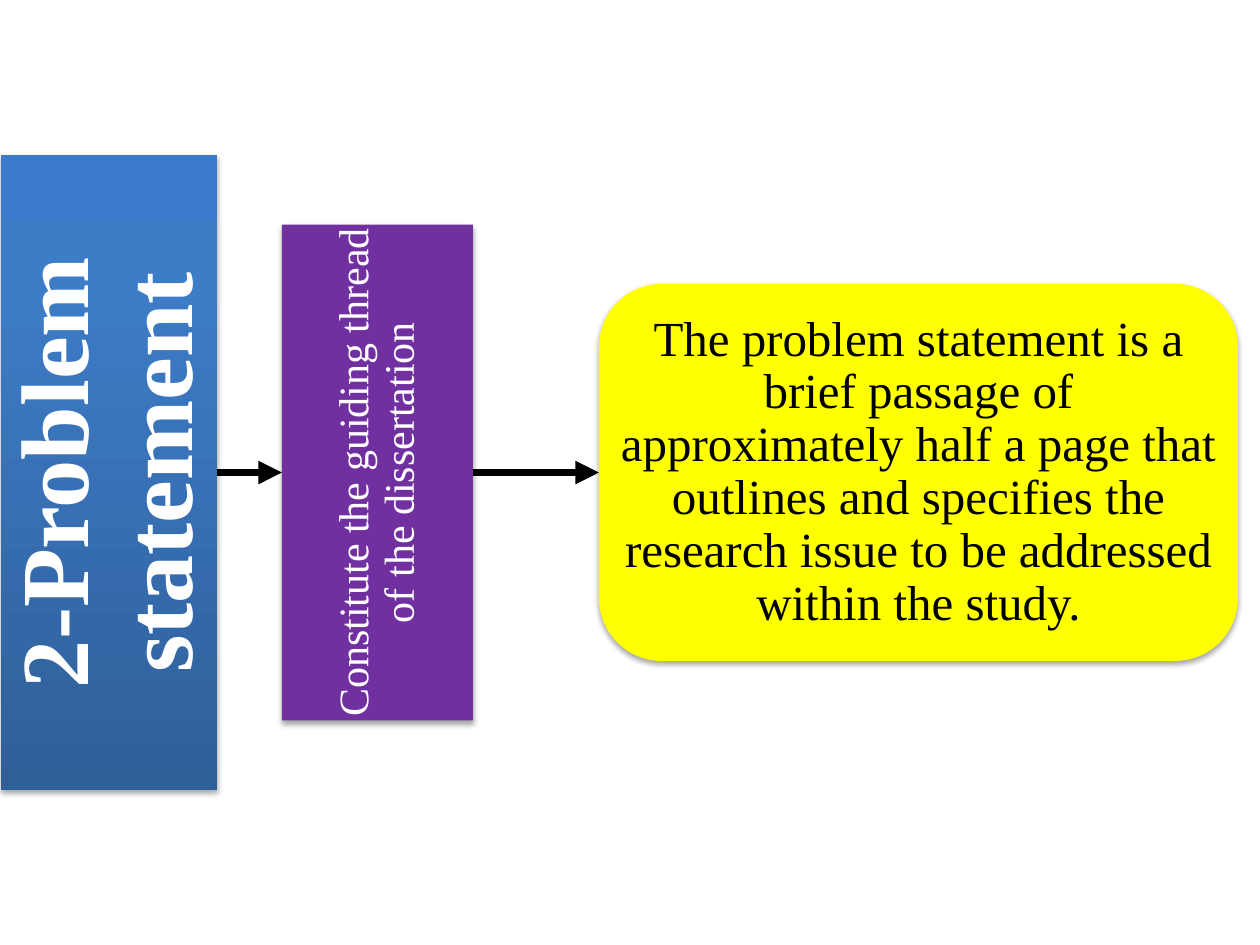
from pptx import Presentation
from pptx.dml.color import RGBColor
from pptx.enum.shapes import MSO_CONNECTOR, MSO_SHAPE
from pptx.enum.text import MSO_ANCHOR, PP_ALIGN
from pptx.oxml import parse_xml
from pptx.oxml.ns import nsdecls
from pptx.util import Pt

PX = 914400 / 126
INK = {"blue": "3A7CCB", "mid": "3D7CC7", "navy": "2F5F99", "purple": "7030A0",
       "yellow": "FFFF00", "white": "FFFFFF", "black": "000000"}
RECT, ROUND = MSO_SHAPE.RECTANGLE, MSO_SHAPE.FLOWCHART_ALTERNATE_PROCESS


def px(n):
    return round(n * PX)


def ink(name):
    return RGBColor.from_string(INK[name])


def write(shape, text, size, color="black", bold=False, inset=2, upright=False):
    frame = shape.text_frame
    frame.word_wrap = True
    frame.vertical_anchor = MSO_ANCHOR.MIDDLE
    frame.margin_left = frame.margin_right = px(inset)
    frame.margin_top = frame.margin_bottom = px(inset)
    if upright:
        frame._txBody.bodyPr.set("vert", "vert270")
    para = frame.paragraphs[0]
    para.alignment = PP_ALIGN.CENTER
    para.line_spacing = 0.9
    run = para.add_run()
    run.text = text
    font = run.font
    font.name, font.size, font.bold = "Times New Roman", Pt(size), bold
    font.color.rgb = ink(color)


def shade(shape):
    """Soft shadow straight below the shape."""
    shape._element.spPr.append(parse_xml(
        f'<a:effectLst {nsdecls("a")}><a:outerShdw blurRad="{Pt(3.1)}" dist="{Pt(1.8)}" '
        'dir="5400000" rotWithShape="0"><a:srgbClr val="000000"><a:alpha val="35000"/>'
        '</a:srgbClr></a:outerShdw></a:effectLst>'))


def fade(shape, stops):
    """Gradient that runs from the bottom to the top."""
    fill = shape.fill
    fill.gradient()
    fill.gradient_angle = 90
    marks = shape._element.spPr.find(".//{*}gsLst")
    for mark in list(marks):
        marks.remove(mark)
    for pos, name in stops:
        marks.append(parse_xml(f'<a:gs {nsdecls("a")} pos="{pos * 1000}">'
                               f'<a:srgbClr val="{INK[name]}"/></a:gs>'))


def block(slide, kind, left, mid, wide, high, fill=None):
    """Box centred on the height mid."""
    shape = slide.shapes.add_shape(kind, px(left), px(mid - high / 2), px(wide), px(high))
    if fill:
        shape.fill.solid()
        shape.fill.fore_color.rgb = ink(fill)
    else:
        fade(shape, [(0, "navy"), (80, "mid"), (100, "blue")])
    shape.line.fill.background()
    shade(shape)
    return shape


def arrow(slide, start, end):
    """Arrow from the right side of start to the left side of end."""
    link = slide.shapes.add_connector(MSO_CONNECTOR.STRAIGHT, 0, 0, 0, 0)
    link.begin_connect(start, 3)
    link.end_connect(end, 1)
    link.line.color.rgb = ink("black")
    link.line.width = Pt(4.5)
    link.line._get_or_add_ln().append(parse_xml(f'<a:tailEnd {nsdecls("a")} type="triangle"/>'))
    link._element.spPr.append(parse_xml(f'<a:effectLst {nsdecls("a")}/>'))


def flow(slide, left, top, wide, high):
    """Title, role and meaning, joined from left to right."""
    mid = top + high / 2
    # Boxes
    title = block(slide, RECT, left, mid, 216, high)
    role = block(slide, RECT, left + 281, mid, 191, 496, "purple")
    sense = block(slide, ROUND, left + wide - 639, mid, 639, 377, "yellow")
    # Text
    write(title, "2-Problem statement", 55, "white", bold=True, inset=5, upright=True)
    write(role, "Constitute the guiding thread of the dissertation", 24, "white", upright=True)
    write(sense, "The problem statement is a brief passage of approximately half a page that "
          "outlines and specifies the research issue to be addressed within the study.", 28)
    # Arrows
    arrow(slide, title, role)
    arrow(slide, role, sense)


def main():
    deck = Presentation()
    deck.slide_width, deck.slide_height = px(1260), px(945)
    slide = deck.slides.add_slide(deck.slide_layouts[6])
    flow(slide, 1, 155, 1237, 635)
    deck.save("out.pptx")


if __name__ == "__main__":
    main()
